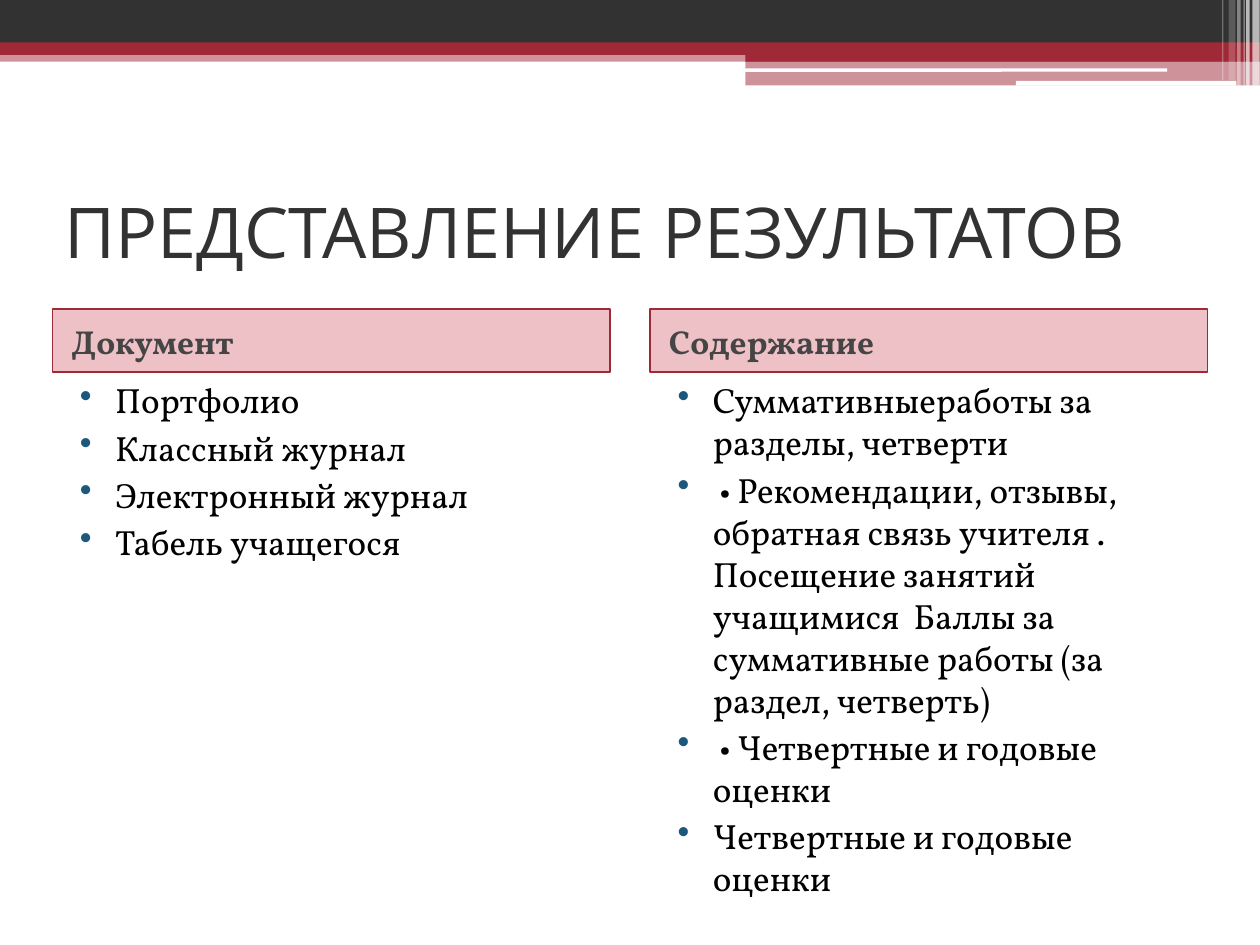
from lxml.etree import SubElement as Sub
from pptx import Presentation
from pptx.dml.color import RGBColor as Rgb
from pptx.enum.shapes import MSO_SHAPE as Kind
from pptx.enum.text import MSO_ANCHOR as Anchor
from pptx.oxml.ns import qn
from pptx.util import Pt

HUES = {
    "dark": "323232", "red": "9F2936", "white": "FFFFFF", "pink": "BC0B1F",
    "head": "454545", "text": "000000", "dot": "1B587C",
}

# Top band: left, top, width, height, colour, opacity in percent
BANDS = [
    (0, 28.8, 720, 6.5, "red", 50),
    (0, 0, 720, 24.5, "dark", 100),
    (0, 24.2, 720, 7.2, "red", 100),
    (426, 28, 294, 7.2, "red", 100),
    (426, 34.6, 294, 14.2, "red", 50),
]
PILLS = [(425.8, 39, 241.2, 2), (580.5, 46.3, 126, 2.6)]

# Stripes in the corner: left, width, height, opacity
BARS = [
    (715.7, 4.15, 49, 65), (712.1, 2, 49, 65), (710.6, 0.7, 49, 60),
    (707, 2, 49, 40), (702, 4, 46, 20), (698.4, 0.7, 46, 30),
]

# Columns: left, heading, points
COLS = [
    (30, "Документ", [
        "Портфолио", "Классный журнал", "Электронный журнал",
        "Табель учащегося"]),
    (371.5, "Содержание", [
        "Суммативныеработы за разделы, четверти",
        " • Рекомендации, отзывы, обратная связь учителя .  Посещение "
        "занятий учащимися  Баллы за суммативные работы "
        "(за раздел, четверть)",
        " • Четвертные и годовые оценки",
        "Четвертные и годовые оценки"]),
]
WIDE = 318.5
TITLE = {"name": "Open Sans", "size": Pt(40), "bold": False}
HEAD = {"name": "Vollkorn", "size": Pt(19), "bold": True}
BODY = {"name": "Vollkorn", "size": Pt(20), "bold": False}


def hue(key):
    return Rgb.from_string(HUES[key])


def add_box(slide, box, key, alpha=100, kind=Kind.RECTANGLE):
    shape = slide.shapes.add_shape(kind, *map(Pt, box))
    shape.shadow.inherit = False
    shape.fill.solid()
    shape.fill.fore_color.rgb = hue(key)
    shape.line.fill.background()
    if alpha < 100:
        tint = shape.fill._xPr.find(".//" + qn("a:srgbClr"))
        Sub(tint, qn("a:alpha"), val=str(alpha * 1000))
    return shape


def add_dot(para):
    props = para._p.get_or_add_pPr()
    props.set("marL", str(Pt(28.8)))
    props.set("indent", str(Pt(-20.16)))
    tint = Sub(props, qn("a:buClr"))
    Sub(tint, qn("a:srgbClr"), val=HUES["dot"])
    Sub(props, qn("a:buChar"), char="•")


def put_text(shape, lines, style, key, anchor, gap=0, dots=False):
    frame = shape.text_frame
    frame.word_wrap = True
    frame.vertical_anchor = anchor
    for num, line in enumerate(lines):
        para = frame.add_paragraph() if num else frame.paragraphs[0]
        para.alignment = 1
        para.space_before = Pt(gap)
        run = para.add_run()
        run.text = line
        for name, value in style.items():
            setattr(run.font, name, value)
        run.font.color.rgb = hue(key)
        if dots:
            add_dot(para)


def add_label(slide, box, *args, **opts):
    put_text(slide.shapes.add_textbox(*map(Pt, box)), *args, **opts)


def add_head(slide, box, text):
    shape = add_box(slide, box, "pink", 25)
    shape.line.color.rgb = hue("red")
    shape.line.width = Pt(1)
    put_text(shape, [text], HEAD, "head", Anchor.MIDDLE, gap=3)
    shape.text_frame.margin_left = Pt(10.8)


def add_top(slide):
    for *box, key, alpha in BANDS:
        add_box(slide, box, key, alpha)
    for box in PILLS:
        pill = add_box(slide, box, "white", kind=Kind.ROUNDED_RECTANGLE)
        pill.adjustments[0] = 0.17
    for left, wide, high, alpha in BARS:
        add_box(slide, (left, 0, wide, high), "white", alpha)


def main():
    deck = Presentation()
    deck.slide_width, deck.slide_height = Pt(720), Pt(540)
    slide = deck.slides.add_slide(deck.slide_layouts[6])

    # Band and title
    add_top(slide)
    add_label(slide, (30, 90, 660, 84), ["ПРЕДСТАВЛЕНИЕ РЕЗУЛЬТАТОВ"],
              TITLE, "dark", Anchor.MIDDLE)

    # Two columns
    for left, head, lines in COLS:
        add_head(slide, (left, 176.8, WIDE, 36), head)
        add_label(slide, (left, 213, WIDE, 306), lines, BODY, "text",
                  Anchor.TOP, gap=3, dots=True)

    deck.save("out.pptx")


if __name__ == "__main__":
    main()
